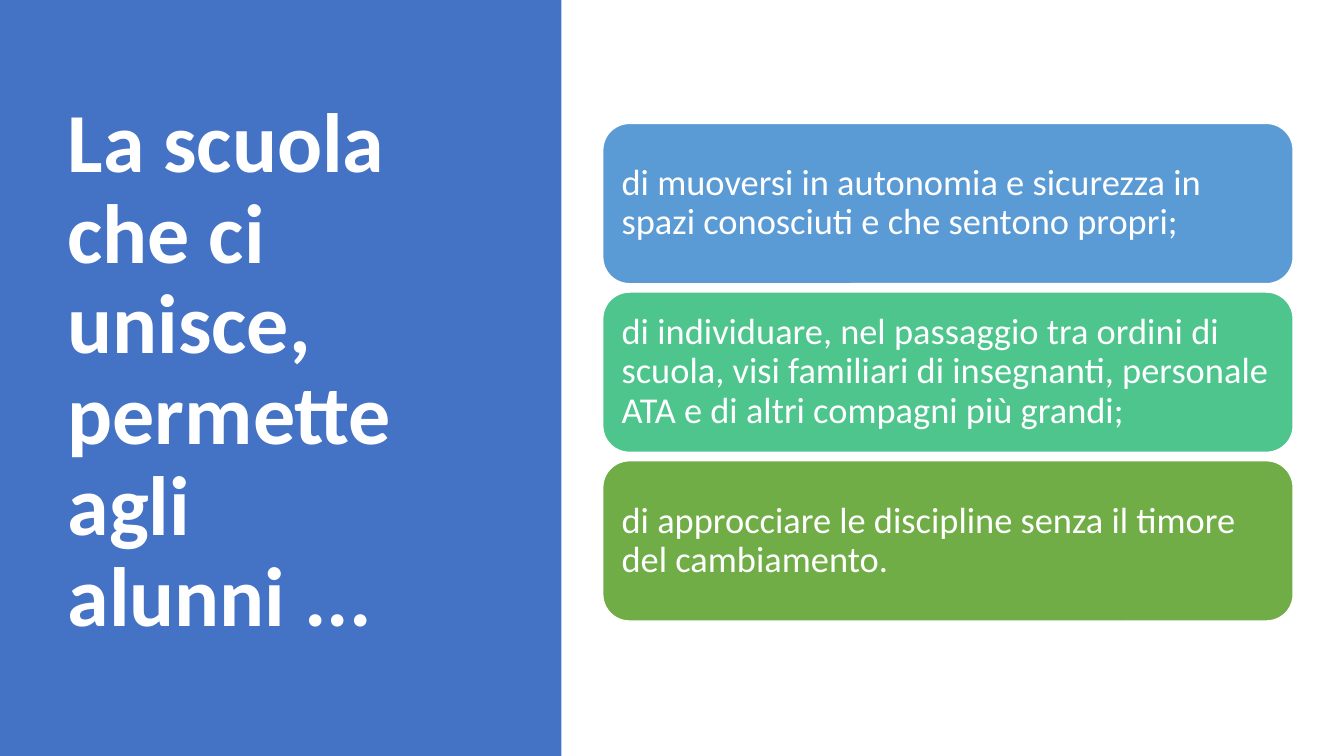
from dataclasses import dataclass

from pptx import Presentation
from pptx.dml.color import RGBColor
from pptx.enum.shapes import MSO_SHAPE
from pptx.enum.text import MSO_ANCHOR, MSO_AUTO_SIZE, PP_ALIGN
from pptx.shapes.autoshape import Shape
from pptx.slide import Slide
from pptx.util import Cm, Pt

COLORS = {
    "panel": "4472C4",
    "blue": "5B9BD5",
    "teal": "4DC58D",
    "green": "70AD47",
    "white": "FFFFFF",
}
FONT = "Calibri"
CARD_LEFT, CARD_TOP, CARD_WIDTH, CARD_HEIGHT = 15.19, 3.11, 17.4, 4.04
CARD_PITCH = 4.25
CARD_INSET = 0.28


@dataclass
class Card:
    text: str
    color: str


CARDS = [
    Card("di muoversi in autonomia e sicurezza in spazi conosciuti e che sentono propri;", "blue"),
    Card("di individuare, nel passaggio tra ordini di scuola, visi familiari di insegnanti, "
         "personale ATA e di altri compagni più grandi;", "teal"),
    Card("di approcciare le discipline senza il timore del cambiamento.", "green"),
]


def rgb(name: str) -> RGBColor:
    return RGBColor.from_string(COLORS[name])


def write_text(sp: Shape, text: str, size: int, bold: bool = False) -> None:
    tf = sp.text_frame
    tf.text = text
    tf.word_wrap = True
    tf.auto_size = MSO_AUTO_SIZE.NONE
    tf.vertical_anchor = MSO_ANCHOR.MIDDLE
    p = tf.paragraphs[0]
    p.alignment = PP_ALIGN.LEFT
    p.line_spacing = 0.9
    p.font.name = FONT
    p.font.size = Pt(size)
    p.font.bold = bold
    p.font.color.rgb = rgb("white")


def add_block(slide: Slide, kind: MSO_SHAPE, left: float, top: float,
              width: float, height: float, color: str) -> Shape:
    sp = slide.shapes.add_shape(kind, Cm(left), Cm(top), Cm(width), Cm(height))
    sp.shadow.inherit = False
    sp.fill.solid()
    sp.fill.fore_color.rgb = rgb(color)
    sp.line.fill.background()
    return sp


def add_card(slide: Slide, card: Card, top: float) -> None:
    sp = add_block(slide, MSO_SHAPE.ROUNDED_RECTANGLE, CARD_LEFT, top,
                   CARD_WIDTH, CARD_HEIGHT, card.color)
    sp.line.color.rgb = rgb("white")
    sp.line.width = Pt(1)
    tf = sp.text_frame
    tf.margin_left = tf.margin_right = tf.margin_top = tf.margin_bottom = Cm(CARD_INSET)
    write_text(sp, card.text, 26)


def main() -> None:
    prs = Presentation()
    prs.slide_width, prs.slide_height = Cm(33.87), Cm(19.05)
    slide = prs.slides.add_slide(prs.slide_layouts[5])

    # Left panel, sent behind the title
    panel = add_block(slide, MSO_SHAPE.RECTANGLE, 0, 0, 14.15, 19.05, "panel")
    title = slide.shapes.title
    title._element.addprevious(panel._element)

    # Title
    title.left, title.top, title.width, title.height = Cm(1.45), Cm(1.73), Cm(10.57), Cm(15.29)
    write_text(title, "La scuola che ci unisce, permette agli alunni ...", 60, bold=True)

    # Stacked cards
    for i, card in enumerate(CARDS):
        add_card(slide, card, CARD_TOP + i * CARD_PITCH)

    prs.save("out.pptx")


if __name__ == "__main__":
    main()
